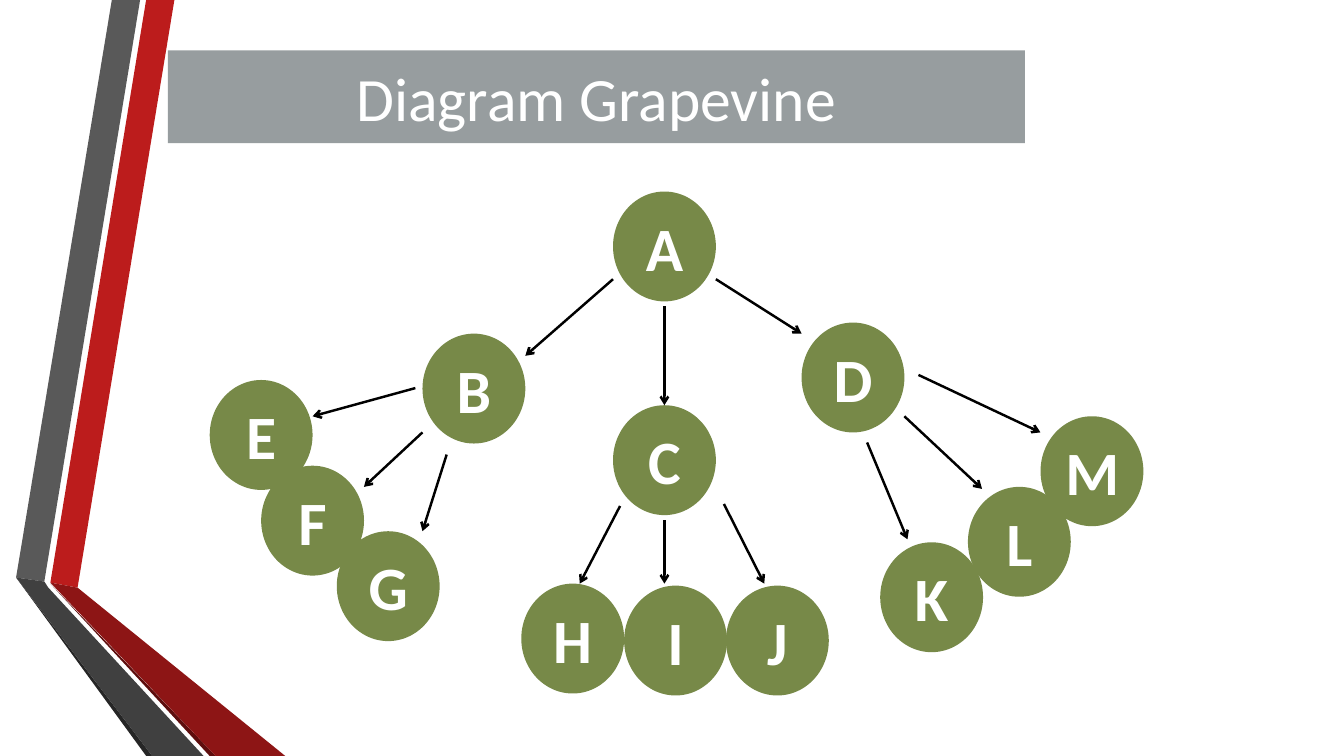
"""Build the grapevine diagram slide."""
from lxml.etree import SubElement
from pptx import Presentation
from pptx.dml.color import RGBColor
from pptx.enum.shapes import MSO_CONNECTOR, MSO_SHAPE
from pptx.enum.text import MSO_ANCHOR, PP_ALIGN
from pptx.oxml.ns import qn
from pptx.util import Inches, Pt

WHITE = RGBColor(0xFF, 0xFF, 0xFF)
BLACK = RGBColor(0x00, 0x00, 0x00)
TITLE_GRAY = RGBColor(0x97, 0x9D, 0x9F)
OLIVE = RGBColor(0x77, 0x89, 0x48)
RED = RGBColor(0xBC, 0x1C, 0x1C)
DARK_RED = RGBColor(0x8D, 0x15, 0x15)
DEEP_RED = RGBColor(0x5E, 0x0E, 0x0E)
GRAY = RGBColor(0x59, 0x59, 0x59)
DARK_GRAY = RGBColor(0x40, 0x40, 0x40)
DEEP_GRAY = RGBColor(0x26, 0x26, 0x26)

WIDTH, HEIGHT = 13.33, 7.5
TITLE = "Diagram Grapevine"
TITLE_PLACE = (WIDTH / 8, HEIGHT / 15, 8.5, 0.92)
NODE_SIZE = (1.02, 1.09)
TEXT_FORMAT = {"name": "Calibri", "size": Pt(44)}

RIBBONS = [
    (RED, [(0.5, 5.78), (0.77, 5.83), (1.73, 0), (1.45, 0)]),
    (GRAY, [(1.39, 0), (1.11, 0), (0.16, 5.73), (0.44, 5.77)]),
    (DEEP_GRAY, [(0.16, 5.73), (1.45, HEIGHT), (1.51, HEIGHT)]),
    (DEEP_RED, [(0.5, 5.79), (2.08, HEIGHT), (2.14, HEIGHT)]),
    (DARK_RED, [(0.5, 5.78), (2.14, HEIGHT), (2.83, HEIGHT), (0.77, 5.83)]),
    (DARK_GRAY, [(2.02, HEIGHT), (0.48, 5.83), (0.44, 5.77), (0.16, 5.73),
                 (1.51, HEIGHT)]),
]

NODES = {
    "A": (6.08, 1.9),
    "B": (4.19, 3.31), "C": (6.08, 4.02), "D": (7.95, 3.2),
    "E": (2.08, 3.77), "F": (2.59, 4.62), "G": (3.34, 5.27),
    "H": (5.17, 5.79), "I": (6.19, 5.81), "J": (7.2, 5.81),
    "K": (8.73, 5.38), "L": (9.6, 4.83), "M": (10.32, 4.13),
}

ARROWS = {
    "A": [((6.08, 2.77), (5.21, 3.53)), ((6.59, 3.04), (6.59, 4.02)),
          ((7.1, 2.77), (7.95, 3.31))],
    "B": [((4.12, 3.85), (3.1, 4.13)), ((4.19, 4.29), (3.61, 4.83)),
          ((4.43, 4.51), (4.19, 5.27))],
    "C": [((6.15, 5.02), (5.75, 5.79)), ((6.59, 5.16), (6.59, 5.79)),
          ((7.18, 5), (7.58, 5.79))],
    "D": [((8.6, 4.39), (9, 5.35)), ((8.97, 4.13), (9.74, 4.85)),
          ((9.11, 3.72), (10.32, 4.29))],
}


def paint(shape, color):
    shape.shadow.inherit = False
    shape.fill.solid()
    shape.fill.fore_color.rgb = color
    shape.line.fill.background()


def add_ribbon(page, color, points):
    start, *corners = [(Inches(x), Inches(y)) for x, y in points]
    builder = page.shapes.build_freeform(*start)
    builder.add_line_segments(corners, close=True)
    paint(builder.convert_to_shape(), color)


def add_label(page, kind, place, color, text, bold):
    shape = page.shapes.add_shape(kind, *[Inches(length) for length in place])
    paint(shape, color)
    shape.text_frame.vertical_anchor = MSO_ANCHOR.MIDDLE
    para = shape.text_frame.paragraphs[0]
    para.alignment = PP_ALIGN.CENTER
    span = para.add_run()
    span.text = text
    for name, value in {**TEXT_FORMAT, "bold": bold}.items():
        setattr(span.font, name, value)
    span.font.color.rgb = WHITE


def add_arrow(page, start, end):
    ends = [Inches(length) for length in start + end]
    arrow = page.shapes.add_connector(MSO_CONNECTOR.STRAIGHT, *ends)
    arrow.line.color.rgb = BLACK
    arrow.line.width = Pt(1.75)
    SubElement(arrow.line._get_or_add_ln(), qn("a:tailEnd"), type="arrow")
    SubElement(arrow._element.spPr, qn("a:effectLst"))


def main():
    deck = Presentation()
    deck.slide_width, deck.slide_height = Inches(WIDTH), Inches(HEIGHT)
    page = deck.slides.add_slide(deck.slide_layouts[6])
    for color, points in RIBBONS:
        add_ribbon(page, color, points)
    add_label(page, MSO_SHAPE.RECTANGLE, TITLE_PLACE, TITLE_GRAY, TITLE, False)
    for letter, corner in NODES.items():
        add_label(page, MSO_SHAPE.OVAL, corner + NODE_SIZE, OLIVE, letter, True)
    for branches in ARROWS.values():
        for start, end in branches:
            add_arrow(page, start, end)
    deck.save("out.pptx")


if __name__ == "__main__":
    main()
